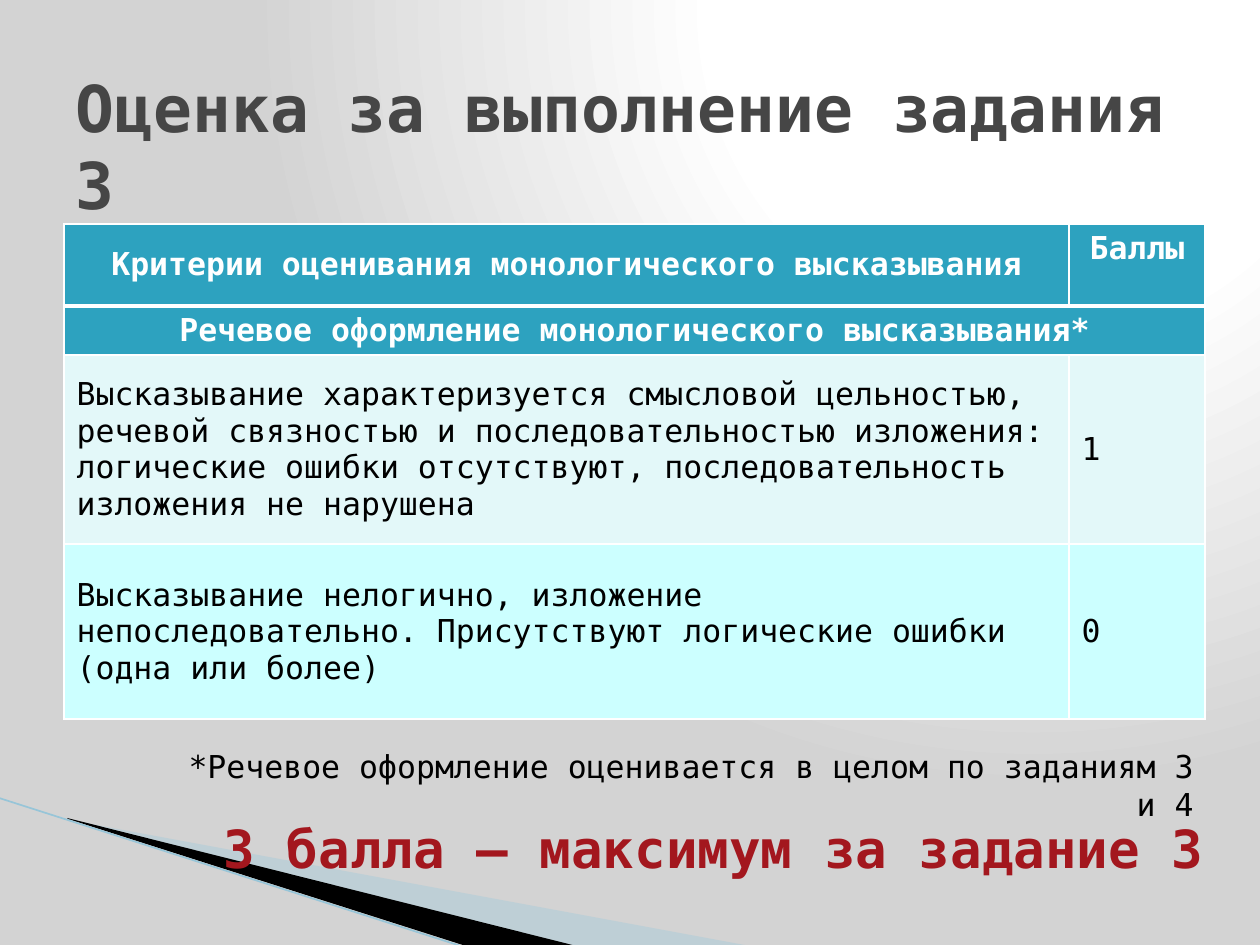
"""Build the slide with the grading table for task 3."""
from dataclasses import dataclass

import pptx
import pptx.dml.color
import pptx.enum.shapes
import pptx.enum.text
import pptx.oxml
import pptx.oxml.ns
import pptx.util

SCALE = 914400 / 126
FONT = "DejaVu Sans Mono"
NS = 'xmlns:a="http://schemas.openxmlformats.org/drawingml/2006/main"'
ALIGN = pptx.enum.text.PP_ALIGN
ANCHOR = pptx.enum.text.MSO_ANCHOR


@dataclass
class Style:
    """Look of a run and its paragraph."""
    size: float
    color: str
    bold: bool = False
    align: ALIGN = ALIGN.LEFT


@dataclass
class Wedge:
    """Filled outline at the foot of the slide."""
    points: list[tuple[int, int]]
    color: str
    alpha: int = 100


@dataclass
class Note:
    """Right-aligned text box."""
    box: tuple[int, int, int, int]
    text: str
    style: Style


@dataclass
class Row:
    """Table row with its fill and text style."""
    height: int
    texts: list[str]
    fill: str
    style: Style


HEAD = Style(18, "FFFFFF", True, ALIGN.CENTER)
BODY = Style(18, "000000")
COLUMNS = [1005, 136]
ROWS = [
    Row(82, ["Критерии оценивания монологического высказывания", "Баллы"], "2DA2BF", HEAD),
    Row(47, ["Речевое оформление монологического высказывания*"], "2DA2BF", HEAD),
    Row(189, ["Высказывание характеризуется смысловой цельностью, речевой связностью и "
              "последовательностью изложения: логические ошибки отсутствуют, "
              "последовательность изложения не нарушена", "1"], "E3F8F9", BODY),
    Row(175, ["Высказывание нелогично, изложение непоследовательно. Присутствуют "
              "логические ошибки (одна или более)", "0"], "CCFFFF", BODY),
]
WEDGES = [
    Wedge([(69, 820), (750, 946), (575, 946), (69, 819)], "A0CBDC", 40),
    Wedge([(67, 818), (576, 946), (469, 947), (68, 819)], "000000"),
]
NOTES = [
    Note((105, 810, 1111, 77), "3 балла – максимум за задание 3",
         Style(30, "A3171E", True, ALIGN.RIGHT)),
    Note((174, 741, 1032, 50), "*Речевое оформление оценивается в целом по заданиям 3 и 4",
         Style(18, "000000", False, ALIGN.RIGHT)),
]


def px(n: int) -> pptx.util.Emu:
    """Turn pixels into EMU."""
    return pptx.util.Emu(round(n * SCALE))


def rgb(color: str) -> pptx.dml.color.RGBColor:
    """Turn a hex string into a colour."""
    return pptx.dml.color.RGBColor.from_string(color)


def write(tf, text: str, style: Style) -> None:
    """Put one styled run into the first paragraph."""
    p = tf.paragraphs[0]
    p.alignment = style.align
    r = p.add_run()
    r.text = text
    r.font.name = FONT
    r.font.size = pptx.util.Pt(style.size)
    r.font.bold = style.bold
    r.font.color.rgb = rgb(style.color)


def set_background(s) -> None:
    """Give the slide a round gradient from the upper right."""
    s.background.fill.solid()
    stops = "".join(f'<a:gs pos="{pos * 1000}"><a:srgbClr val="{color}"/></a:gs>'
                    for pos, color in [(0, "FFFFFF"), (40, "FFFFFF"), (100, "D3D3D3")])
    grad = pptx.oxml.parse_xml(
        f'<a:gradFill {NS} rotWithShape="1"><a:gsLst>{stops}</a:gsLst><a:path path="circle">'
        '<a:fillToRect l="65000" t="0" r="0" b="98000"/></a:path></a:gradFill>')
    solid = next(s.element.iter(pptx.oxml.ns.qn("a:solidFill")))
    solid.getparent().replace(solid, grad)


def add_wedge(s, wedge: Wedge) -> None:
    """Draw one wedge."""
    builder = s.shapes.build_freeform(*wedge.points[0], scale=SCALE)
    builder.add_line_segments(wedge.points[1:], close=True)
    sp = builder.convert_to_shape()
    sp.shadow.inherit = False
    sp.line.fill.background()
    sp.fill.solid()
    sp.fill.fore_color.rgb = rgb(wedge.color)
    if wedge.alpha < 100:
        color = next(sp.element.spPr.iter(pptx.oxml.ns.qn("a:srgbClr")))
        color.append(pptx.oxml.parse_xml(f'<a:alpha {NS} val="{wedge.alpha * 1000}"/>'))


def add_edge(s) -> None:
    """Draw the thin slanted line."""
    line = s.shapes.add_connector(pptx.enum.shapes.MSO_CONNECTOR.STRAIGHT,
                                  px(-1), px(798), px(467), px(948))
    line.line.color.rgb = rgb("97C5D8")
    line.line.width = pptx.util.Pt(0.95)
    line.element.spPr.append(pptx.oxml.parse_xml(f"<a:effectLst {NS}/>"))


def add_title(s, text: str) -> None:
    """Place the title in front of the wedges."""
    sp = s.shapes.title
    sp.element.getparent().append(sp.element)
    sp.left, sp.top, sp.width, sp.height = px(63), px(86), px(1134), px(118)
    tf = sp.text_frame
    tf.word_wrap = True
    tf.auto_size = pptx.enum.text.MSO_AUTO_SIZE.NONE
    tf.vertical_anchor = ANCHOR.MIDDLE
    write(tf, text, Style(36.9, "464646", True))


def set_borders(cell, top: int, bottom: int) -> None:
    """Draw white cell borders with the given widths in points."""
    tc_pr = cell._tc.get_or_add_tcPr()
    for side, width in {"L": 1, "R": 1, "T": top, "B": bottom}.items():
        tc_pr.append(pptx.oxml.parse_xml(
            f'<a:ln{side} {NS} w="{pptx.util.Pt(width)}"><a:solidFill>'
            f'<a:srgbClr val="FFFFFF"/></a:solidFill></a:ln{side}>'))


def add_criteria(s) -> None:
    """Draw the table of criteria and points."""
    table = s.shapes.add_table(len(ROWS), len(COLUMNS), px(64), px(224), px(sum(COLUMNS)),
                               px(sum(row.height for row in ROWS))).table
    for column, width in zip(table.columns, COLUMNS):
        column.width = px(width)
    for i, row in enumerate(ROWS):
        table.rows[i].height = px(row.height)
        for j in range(len(COLUMNS)):
            cell = table.cell(i, j)
            set_borders(cell, 3 if i == 1 else 1, 3 if i == 0 else 1)
            cell.fill.solid()
            cell.fill.fore_color.rgb = rgb(row.fill)
            cell.vertical_anchor = ANCHOR.MIDDLE
        for j, text in enumerate(row.texts):
            write(table.cell(i, j).text_frame, text, row.style)
        if len(row.texts) == 1:
            table.cell(i, 0).merge(table.cell(i, len(COLUMNS) - 1))
    table.cell(0, 1).vertical_anchor = ANCHOR.TOP


def add_note(s, note: Note) -> None:
    """Add one text box."""
    tf = s.shapes.add_textbox(*map(px, note.box)).text_frame
    tf.word_wrap = True
    tf.auto_size = pptx.enum.text.MSO_AUTO_SIZE.SHAPE_TO_FIT_TEXT
    write(tf, note.text, note.style)


def main() -> None:
    """Build and save the slide."""
    prs = pptx.Presentation()
    prs.slide_width, prs.slide_height = px(1260), px(945)
    s = prs.slides.add_slide(prs.slide_layouts[5])
    set_background(s)
    for wedge in WEDGES:
        add_wedge(s, wedge)
    add_edge(s)
    add_title(s, "Оценка за выполнение задания 3")
    add_criteria(s)
    for note in NOTES:
        add_note(s, note)
    prs.save("out.pptx")


if __name__ == "__main__":
    main()
